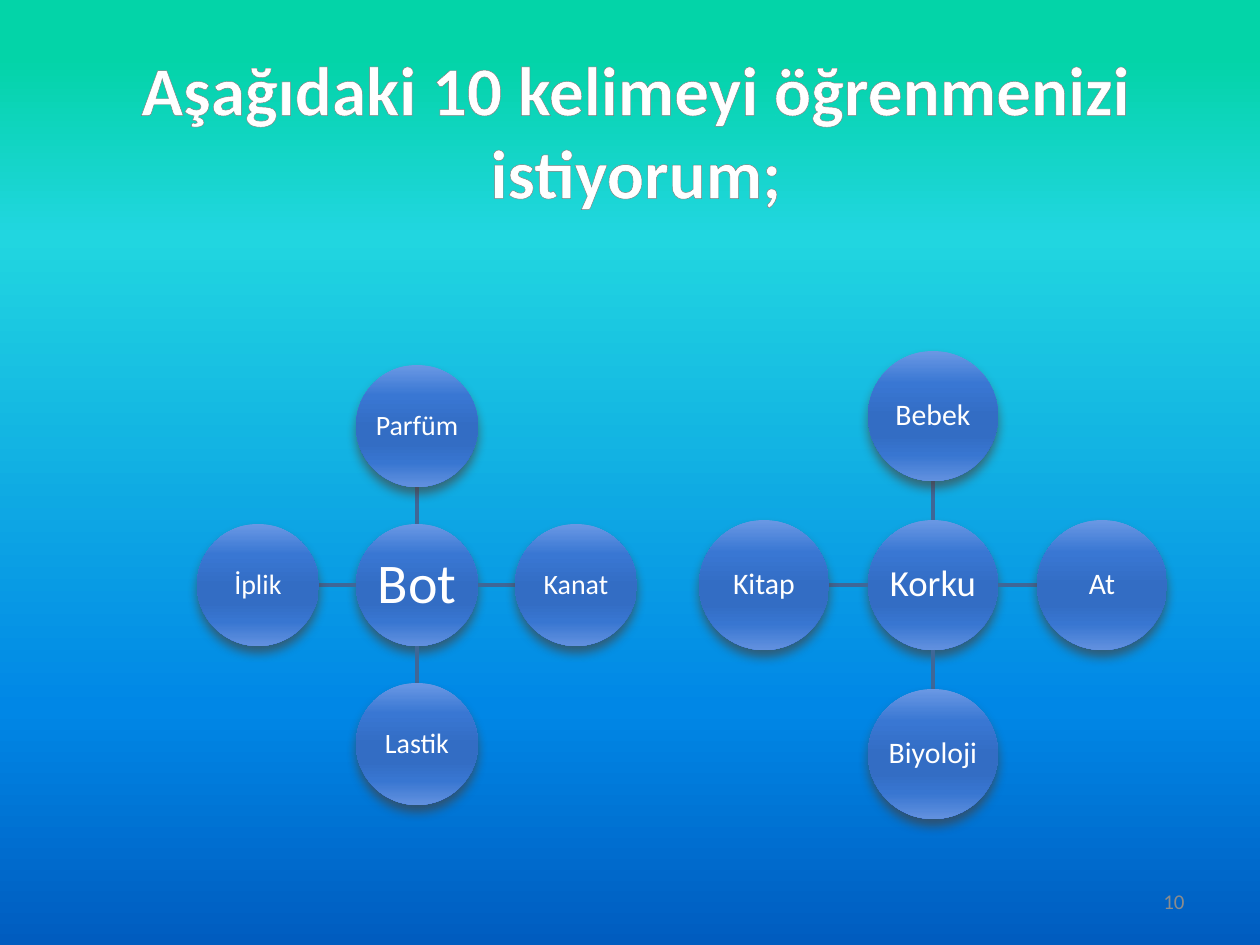
from lxml import etree
from pptx import Presentation
from pptx.dml.color import RGBColor
from pptx.enum.shapes import MSO_CONNECTOR, MSO_SHAPE
from pptx.enum.text import MSO_ANCHOR, PP_ALIGN
from pptx.oxml.ns import qn
from pptx.util import Emu, Pt

ELLIPSE = MSO_SHAPE.OVAL
STRAIGHT = MSO_CONNECTOR.STRAIGHT
MIDDLE = MSO_ANCHOR.MIDDLE
CENTER, RIGHT = PP_ALIGN.CENTER, PP_ALIGN.RIGHT

FONT = "Calibri"
WHITE = RGBColor(0xFF, 0xFF, 0xFF)
GRAY = RGBColor(0x8C, 0x8C, 0x8C)
MID_GRAY = RGBColor(0x7F, 0x7F, 0x7F)
OUTLINE = RGBColor(0x7D, 0x7D, 0x7D)
LINK = RGBColor(0x3F, 0x67, 0x97)
SHADOW = RGBColor(0x4E, 0x3B, 0x30)

BACKGROUND_STOPS = [
    (6, RGBColor(0x03, 0xD4, 0xA8)),
    (25, RGBColor(0x21, 0xD6, 0xE0)),
    (75, RGBColor(0x00, 0x87, 0xE6)),
    (100, RGBColor(0x00, 0x5C, 0xBF)),
]
CIRCLE_STOPS = [
    (0, RGBColor(0x6A, 0x98, 0xE4)),
    (25, RGBColor(0x39, 0x77, 0xD3)),
    (50, RGBColor(0x33, 0x6D, 0xC4)),
    (65, RGBColor(0x33, 0x6D, 0xC4)),
    (80, RGBColor(0x38, 0x76, 0xD1)),
    (100, RGBColor(0x62, 0x91, 0xDF)),
]
TITLE_STOPS = [(0, WHITE), (9, WHITE), (50, MID_GRAY), (79, WHITE), (100, WHITE)]

TITLE = "Aşağıdaki 10 kelimeyi öğrenmenizi istiyorum;"
PAGE_NUMBER = "10"
# Satellite words run clockwise from the top.
CLUSTERS = [
    dict(hub="Bot", hub_size=32, words=["Parfüm", "Kanat", "Lastik", "İplik"],
         word_size=16, center=(417, 585), diameter=122, reach=159),
    dict(hub="Korku", hub_size=21, words=["Bebek", "At", "Biyoloji", "Kitap"],
         word_size=17, center=(933, 585), diameter=130, reach=169),
]
DIRECTIONS = [(0, -1), (1, 0), (0, 1), (-1, 0)]


def px(value):
    return Emu(round(value * 914400 / 126))


def add_color(parent, color, alpha=None):
    element = etree.SubElement(parent, qn("a:srgbClr"), val=str(color))
    if alpha is not None:
        etree.SubElement(element, qn("a:alpha"), val=str(alpha * 1000))


def set_gradient(fill, parent, stops):
    """Give parent, the element that holds fill, a top-to-bottom gradient."""
    fill.solid()
    gradient = etree.Element(qn("a:gradFill"), rotWithShape="1")
    stop_list = etree.SubElement(gradient, qn("a:gsLst"))
    for position, color in stops:
        add_color(etree.SubElement(stop_list, qn("a:gs"), pos=str(position * 1000)), color)
    etree.SubElement(gradient, qn("a:lin"), ang="5400000", scaled="0")
    parent.replace(parent.find(qn("a:solidFill")), gradient)


def write(shape, text, size, align, color=WHITE):
    frame = shape.text_frame
    frame.vertical_anchor = MIDDLE
    paragraph = frame.paragraphs[0]
    paragraph.alignment = align
    run = paragraph.add_run()
    run.text = text
    run.font.name = FONT
    run.font.size = Pt(size)
    run.font.color.rgb = color
    return run


def add_text_box(slide, left, top, width, height):
    box = slide.shapes.add_textbox(px(left), px(top), px(width), px(height))
    box.text_frame.word_wrap = True
    return box


def add_title(slide):
    box = add_text_box(slide, 69, 78, 1134, 186)
    run = write(box, TITLE, 39.6, CENTER)
    run.font.bold = True
    properties = run.font._element if hasattr(run.font, "_element") else run._r.get_or_add_rPr()
    set_gradient(run.font.fill, properties, TITLE_STOPS)
    outline = etree.Element(qn("a:ln"), w=str(Pt(0.83)))
    add_color(etree.SubElement(outline, qn("a:solidFill")), OUTLINE)
    properties.insert(0, outline)
    paragraph = box.text_frame.paragraphs[0]
    paragraph.font.size = run.font.size
    paragraph.add_line_break()


def add_circle(slide, x, y, diameter, text, size):
    circle = slide.shapes.add_shape(
        ELLIPSE, px(x - diameter / 2), px(y - diameter / 2), px(diameter), px(diameter))
    properties = circle._element.spPr
    set_gradient(circle.fill, properties, CIRCLE_STOPS)
    circle.line.fill.background()
    circle.shadow.inherit = False
    shadow = etree.SubElement(
        properties.find(qn("a:effectLst")), qn("a:outerShdw"), blurRad=str(Pt(6)),
        dist=str(Pt(4)), dir="5400000", rotWithShape="0")
    add_color(shadow, SHADOW, 60)
    frame = circle.text_frame
    frame.word_wrap = False
    frame.margin_left = frame.margin_right = frame.margin_top = frame.margin_bottom = px(1)
    write(circle, text, size, CENTER)
    frame.paragraphs[0].line_spacing = 0.9


def add_link(slide, x1, y1, x2, y2):
    link = slide.shapes.add_connector(STRAIGHT, px(x1), px(y1), px(x2), px(y2))
    link.line.color.rgb = LINK
    link.line.width = Pt(2)
    etree.SubElement(link._element.spPr, qn("a:effectLst"))


def add_cluster(slide, hub, hub_size, words, word_size, center, diameter, reach):
    x, y = center
    near, far = diameter / 2, reach - diameter / 2
    add_circle(slide, x, y, diameter, hub, hub_size)
    for word, (dx, dy) in zip(words, DIRECTIONS):
        add_link(slide, x + dx * near, y + dy * near, x + dx * far, y + dy * far)
        add_circle(slide, x + dx * reach, y + dy * reach, diameter, word, word_size)


def main():
    presentation = Presentation()
    presentation.slide_width, presentation.slide_height = px(1260), px(945)
    slide = presentation.slides.add_slide(presentation.slide_layouts[6])
    background = slide.background.fill
    background.solid()
    set_gradient(background, slide.element.find(".//" + qn("p:bgPr")), BACKGROUND_STOPS)
    add_title(slide)
    write(add_text_box(slide, 903, 876, 294, 50), PAGE_NUMBER, 12, RIGHT, GRAY)
    for cluster in CLUSTERS:
        add_cluster(slide, **cluster)
    presentation.save("out.pptx")


if __name__ == "__main__":
    main()
